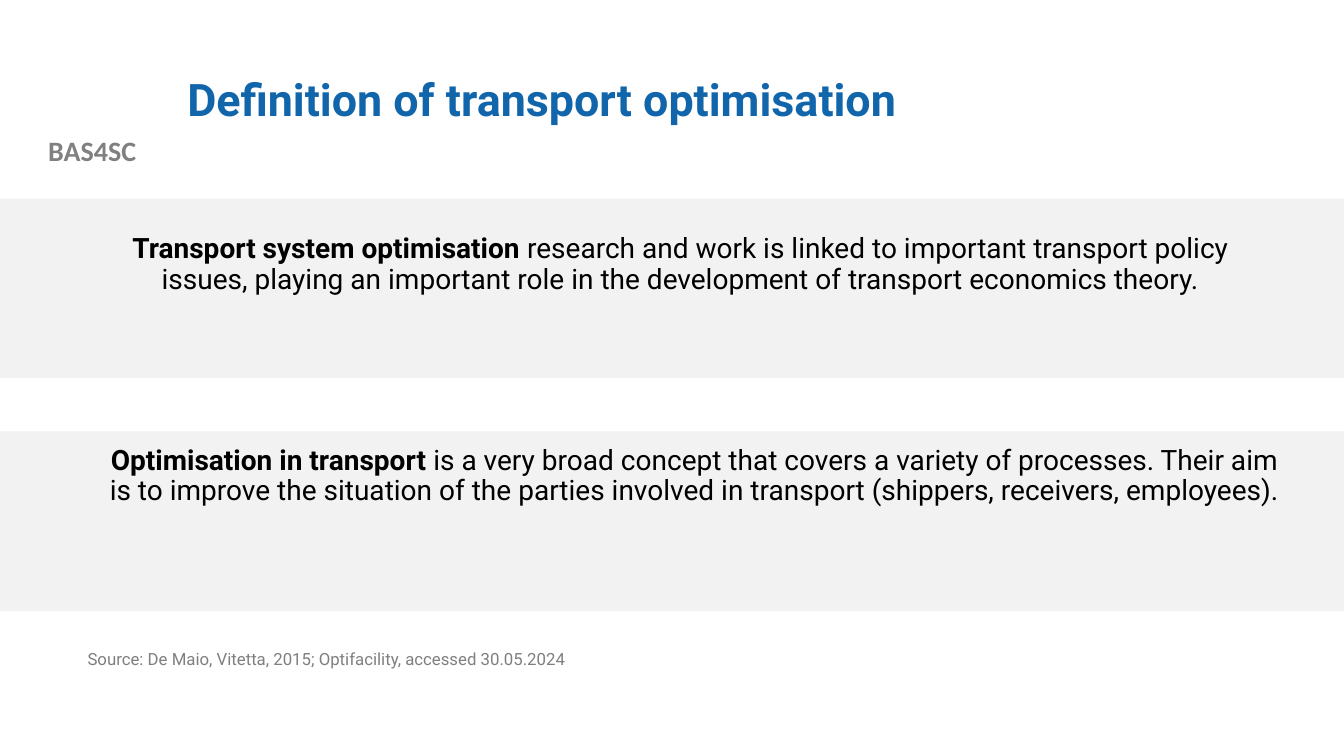
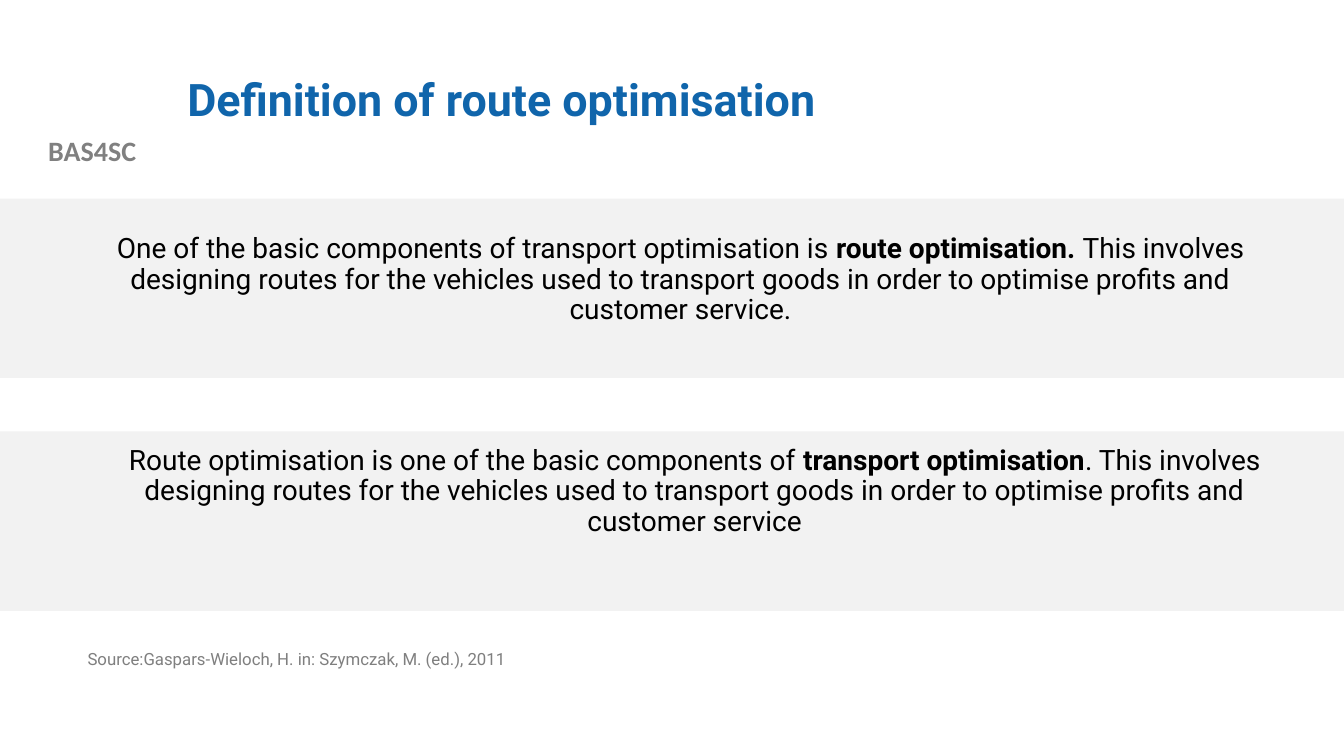
"""Build two slides that define transport and route optimisation."""
from pptx import Presentation
from pptx.dml.color import RGBColor
from pptx.enum.shapes import MSO_SHAPE
from pptx.enum.text import MSO_ANCHOR, PP_ALIGN
from pptx.util import Inches, Pt

WIDTH, HEIGHT = 13.33, 7.5
COLORS = {"title": "1065AB", "band": "F2F2F2", "body": "000000",
          "label": "808080", "source": "7F7F7F"}
BANDS = (1.97, 4.28)
BODIES = ((1, 2.28, 11.5, 1.69), (0.93, 4.38, 11.92, 1.69))
SLIDES = [
    ("Definition of transport optimisation",
     [[("Transport system optimisation ", True),
       ("research and work is linked to important transport policy issues, "
        "playing an important role in the development of transport "
        "economics theory.", False)],
      [("Optimisation in transport ", True),
       ("is a very broad concept that covers a variety of processes. "
        "Their aim is to improve the situation of the parties involved in "
        "transport (shippers, receivers, employees).", False)]],
     "Source: De Maio, Vitetta, 2015; Optifacility, accessed 30.05.2024"),
    ("Definition of route optimisation",
     [[("One of the basic components of transport optimisation is", False),
       (" route optimisation. ", True),
       ("This involves designing routes for the vehicles used to transport "
        "goods in order to optimise profits and customer service.", False)],
      [("Route optimisation is one of the basic components of ", False),
       ("transport optimisation", True),
       (". This involves designing routes for the vehicles used to transport "
        "goods in order to optimise profits and customer service", False)]],
     "Source:Gaspars-Wieloch, H. in: Szymczak, M. (ed.), 2011"),
]


def add_band(slide, top):
    band = slide.shapes.add_shape(MSO_SHAPE.RECTANGLE, 0, Inches(top),
                                  Inches(WIDTH), Inches(1.78))
    band.shadow.inherit = False
    band.fill.solid()
    band.fill.fore_color.rgb = RGBColor.from_string(COLORS["band"])
    band.line.fill.background()


def add_text(slide, box, runs, size, color, font="Roboto",
             align=PP_ALIGN.LEFT, anchor=MSO_ANCHOR.TOP, spacing=0.9):
    frame = slide.shapes.add_textbox(*map(Inches, box)).text_frame
    frame.word_wrap = True
    frame.vertical_anchor = anchor
    para = frame.paragraphs[0]
    para.alignment = align
    para.line_spacing = spacing
    para.font.name = font
    para.font.size = Pt(size)
    para.font.color.rgb = RGBColor.from_string(COLORS[color])
    for text, bold in runs:
        run = para.add_run()
        run.text = text
        run.font.bold = bold


def add_slide(deck, title, bodies, source):
    slide = deck.slides.add_slide(deck.slide_layouts[6])
    add_text(slide, (0, 1.28, 1.83, 0.44), [("BAS4SC", True)], 20, "label",
             font="Calibri", align=PP_ALIGN.CENTER, spacing=1.0)
    for top in BANDS:
        add_band(slide, top)
    add_text(slide, (1.76, 0.4, 10.66, 1.22), [(title, True)], 32, "title",
             anchor=MSO_ANCHOR.MIDDLE)
    for box, runs in zip(BODIES, bodies):
        add_text(slide, box, runs, 20, "body", align=PP_ALIGN.CENTER)
    add_text(slide, (0.77, 6.41, 5.6, 0.52), [(source, False)], 12, "source")


def main():
    deck = Presentation()
    deck.slide_width, deck.slide_height = Inches(WIDTH), Inches(HEIGHT)
    for content in SLIDES:
        add_slide(deck, *content)
    deck.save("out.pptx")


if __name__ == "__main__":
    main()
